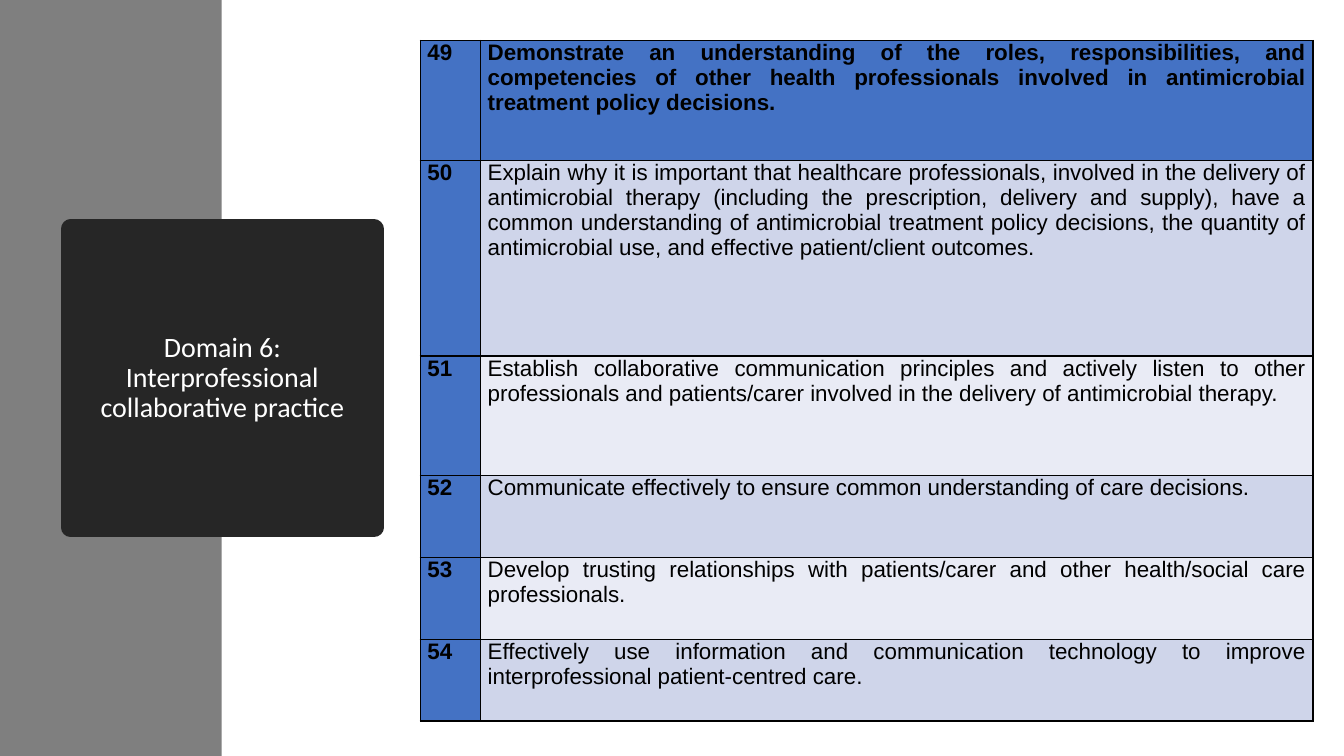
from lxml import etree
from pptx import Presentation
from pptx import util as u
from pptx.dml import color
from pptx.enum import shapes, text
from pptx.oxml import ns

COLORS = {
    "panel": "7F7F7F", "title_box": "262626", "title": "FFFFFF",
    "text": "000000", "border": "000000",
    "header": "4472C4", "band_dark": "CFD5EA", "band_light": "E9EBF5",
}

COMPETENCIES = [
    (3.02, "Demonstrate an understanding of the roles, responsibilities, and competencies of "
           "other health professionals involved in antimicrobial treatment policy decisions."),
    (4.93, "Explain why it is important that healthcare professionals, involved in the delivery "
           "of antimicrobial therapy (including the prescription, delivery and supply), have a "
           "common understanding of antimicrobial treatment policy decisions, the quantity of "
           "antimicrobial use, and effective patient/client outcomes."),
    (3.02, "Establish collaborative communication principles and actively listen to other "
           "professionals and patients/carer involved in the delivery of antimicrobial therapy."),
    (2.06, "Communicate effectively to ensure common understanding of care decisions."),
    (2.06, "Develop trusting relationships with patients/carer and other health/social care "
           "professionals."),
    (2.06, "Effectively use information and communication technology to improve "
           "interprofessional patient-centred care."),
]
FIRST_NUMBER = 49


def rgb(name):
    return color.RGBColor.from_string(COLORS[name])


def write(frame, words, font, size, ink, align, bold=False, spacing=None):
    para = frame.paragraphs[0]
    para.alignment = align
    para.line_spacing = spacing
    span = para.add_run()
    span.text = words
    span.font.name = font
    span.font.size = u.Pt(size)
    span.font.bold = bold
    span.font.color.rgb = rgb(ink)


deck = Presentation()
deck.slide_width, deck.slide_height = u.Cm(33.87), u.Cm(19.05)
page = deck.slides.add_slide(deck.slide_layouts[6])

# Grey side panel
panel = page.shapes.add_shape(shapes.MSO_SHAPE.RECTANGLE, 0, 0, u.Cm(5.59), deck.slide_height)
panel.shadow.inherit = False
panel.fill.solid()
panel.fill.fore_color.rgb = rgb("panel")
panel.line.fill.background()

# Title box, its corners rounded by the thick outline
title_box = page.shapes.add_shape(
    shapes.MSO_SHAPE.RECTANGLE, u.Cm(1.78), u.Cm(5.77), u.Cm(7.65), u.Cm(7.52))
title_box.shadow.inherit = False
title_box.fill.solid()
title_box.fill.fore_color.rgb = rgb("title_box")
title_box.line.color.rgb = rgb("title_box")
title_box.line.width = u.Pt(13.75)
etree.SubElement(title_box.line._get_or_add_ln(), ns.qn("a:round"))
title_box.text_frame.word_wrap = True
title_box.text_frame.vertical_anchor = text.MSO_ANCHOR.MIDDLE
write(title_box.text_frame, "Domain 6: Interprofessional collaborative practice",
      font="Calibri", size=20, ink="title", align=text.PP_ALIGN.CENTER, spacing=0.9)

# Competency table
table = page.shapes.add_table(
    len(COMPETENCIES), 2, u.Cm(10.59), u.Cm(1.02), u.Cm(22.5), u.Cm(17.15)).table
table.columns[0].width = u.Cm(1.52)
table.columns[1].width = u.Cm(20.98)

for row, (height, competency) in enumerate(COMPETENCIES):
    table.rows[row].height = u.Cm(height)
    for column, words in enumerate((str(FIRST_NUMBER + row), competency)):
        cell = table.cell(row, column)
        heading = row == 0 or column == 0
        cell.margin_left = cell.margin_right = u.Cm(0.18)
        cell.margin_top = cell.margin_bottom = 0
        write(cell.text_frame, words, font="Arial", size=16, ink="text",
              align=text.PP_ALIGN.JUSTIFY, bold=heading)

        # Borders go before the fill in the cell properties
        properties = cell._tc.get_or_add_tcPr()
        for side in ("a:lnL", "a:lnR", "a:lnT", "a:lnB"):
            border = etree.SubElement(properties, ns.qn(side), w=str(u.Pt(1)))
            solid = etree.SubElement(border, ns.qn("a:solidFill"))
            etree.SubElement(solid, ns.qn("a:srgbClr"), val=COLORS["border"])
        band = "band_dark" if row % 2 else "band_light"
        cell.fill.solid()
        cell.fill.fore_color.rgb = rgb("header" if heading else band)

deck.save("out.pptx")
